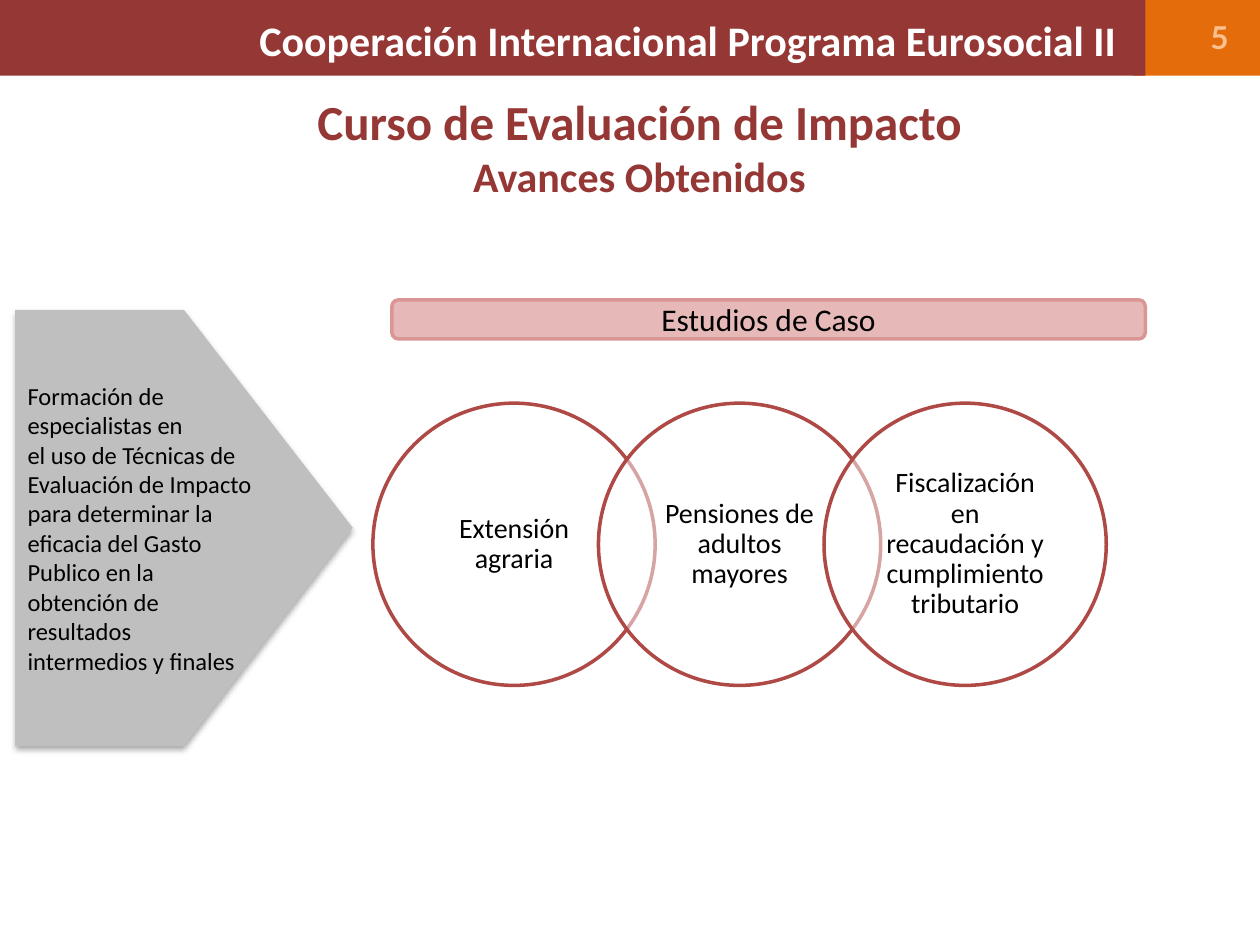
"""Build the slide on the impact evaluation course and its case studies."""
import dataclasses
import typing

import lxml.etree
import pptx
import pptx.dml.color
import pptx.enum.shapes
import pptx.enum.text
import pptx.oxml.ns
import pptx.util

Inches = pptx.util.Inches
Color = pptx.dml.color.RGBColor
Shape = pptx.enum.shapes.MSO_SHAPE
Align = pptx.enum.text.PP_ALIGN
Anchor = pptx.enum.text.MSO_ANCHOR
qn = pptx.oxml.ns.qn

WHITE = Color(0xFF, 0xFF, 0xFF)
BLACK = Color(0x00, 0x00, 0x00)
WINE = Color(0x95, 0x37, 0x35)
ORANGE = Color(0xE4, 0x6C, 0x0A)
PEACH = Color(0xFA, 0xC0, 0x90)
GRAY = Color(0xBF, 0xBF, 0xBF)
PINK = Color(0xE6, 0xB9, 0xB8)
ROSE = Color(0xD9, 0x96, 0x94)
RED = Color(0xAE, 0x49, 0x46)


@dataclasses.dataclass
class Box:
    left: float
    top: float
    width: float
    height: float

    def place(self) -> tuple:
        return tuple(map(Inches, (self.left, self.top, self.width, self.height)))


@dataclasses.dataclass
class Line:
    text: str
    size: int
    color: Color = BLACK
    bold: bool = False
    font: str = "Calibri"


def write(shape: typing.Any, lines: list[Line], align: Align = Align.CENTER,
          inset: tuple = (0.1, 0.05), space: float = 1.0) -> None:
    frame = shape.text_frame
    frame.word_wrap = True
    frame.auto_size = pptx.enum.text.MSO_AUTO_SIZE.NONE
    frame.vertical_anchor = Anchor.MIDDLE
    frame.margin_left = frame.margin_right = Inches(inset[0])
    frame.margin_top = frame.margin_bottom = Inches(inset[1])
    for index, line in enumerate(lines):
        para = frame.add_paragraph() if index else frame.paragraphs[0]
        para.alignment = align
        para.line_spacing = space
        run = para.add_run()
        run.text = line.text
        run.font.name = line.font
        run.font.size = pptx.util.Pt(line.size)
        run.font.bold = line.bold
        run.font.color.rgb = line.color


def draw(slide: typing.Any, kind: Shape, box: Box, fill: Color,
         edge: Color | None = None) -> typing.Any:
    shape = slide.shapes.add_shape(kind, *box.place())
    shape.shadow.inherit = False
    shape.fill.solid()
    shape.fill.fore_color.rgb = fill
    if edge is None:
        shape.line.fill.background()
    else:
        shape.line.color.rgb = edge
        shape.line.width = pptx.util.Pt(2)
    return shape


def label(slide: typing.Any, box: Box, line: Line, **style: typing.Any) -> None:
    write(slide.shapes.add_textbox(*box.place()), [line], **style)


def fade(node: typing.Any, share: int) -> None:
    lxml.etree.SubElement(node, qn("a:alpha"), val=str(share * 1000))


def shade(shape: typing.Any) -> None:
    effects = shape._element.spPr.find(qn("a:effectLst"))
    shadow = lxml.etree.SubElement(
        effects, qn("a:outerShdw"), blurRad=str(pptx.util.Pt(3.5)),
        dist=str(pptx.util.Pt(2.2)), dir="5400000", rotWithShape="0")
    fade(lxml.etree.SubElement(shadow, qn("a:srgbClr"), val=str(BLACK)), 32)


def circle(slide: typing.Any, left: float, text: str) -> None:
    ring = draw(slide, Shape.OVAL, Box(left, 3.2, 2.24, 2.24), WHITE, RED)
    fade(ring._element.spPr.find(qn("a:solidFill"))[0], 50)
    label(slide, Box(left + 0.33, 3.53, 1.58, 1.58), Line(text, 16),
          inset=(0.12, 0.02), space=0.9)


def main() -> None:
    deck = pptx.Presentation()
    deck.slide_width, deck.slide_height = Inches(10), Inches(7.5)
    slide = deck.slides.add_slide(deck.slide_layouts[5])

    draw(slide, Shape.RECTANGLE, Box(8.99, 0, 1.01, 0.6), ORANGE)
    draw(slide, Shape.RECTANGLE, Box(0, 0, 9.09, 0.6), WINE)
    label(slide, Box(9.1, 0.09, 0.75, 0.4),
          Line("5", 18, PEACH, True, "Lato"), align=Align.RIGHT)

    title = slide.shapes.title
    title.left, title.top, title.width, title.height = Box(0.51, 0.66, 9.13, 1).place()
    write(title, [Line("Curso de Evaluación de Impacto", 28, WINE, True),
                  Line("Avances Obtenidos", 24, WINE, True)])
    label(slide, Box(0.96, 0, 9, 0.63),
          Line("Cooperación Internacional Programa Eurosocial II", 24, WHITE, True))

    cases = ["Extensión agraria", "Pensiones de adultos mayores",
             "Fiscalización en recaudación y cumplimiento tributario"]
    for index, text in enumerate(cases):
        circle(slide, 2.96 + 1.79 * index, text)

    arrow = draw(slide, Shape.PENTAGON, Box(0.12, 2.46, 2.68, 3.46), GRAY)
    shade(arrow)
    write(arrow, [
        Line("Formación de especialistas en", 14),
        Line("el uso de Técnicas de Evaluación de Impacto para determinar la "
             "eficacia del Gasto Publico en la obtención de resultados "
             "intermedios y finales", 14)], Align.LEFT)

    banner = draw(slide, Shape.ROUNDED_RECTANGLE, Box(3.11, 2.38, 5.98, 0.31), PINK, ROSE)
    write(banner, [Line("Estudios de Caso", 18)])
    deck.save("out.pptx")


if __name__ == "__main__":
    main()
